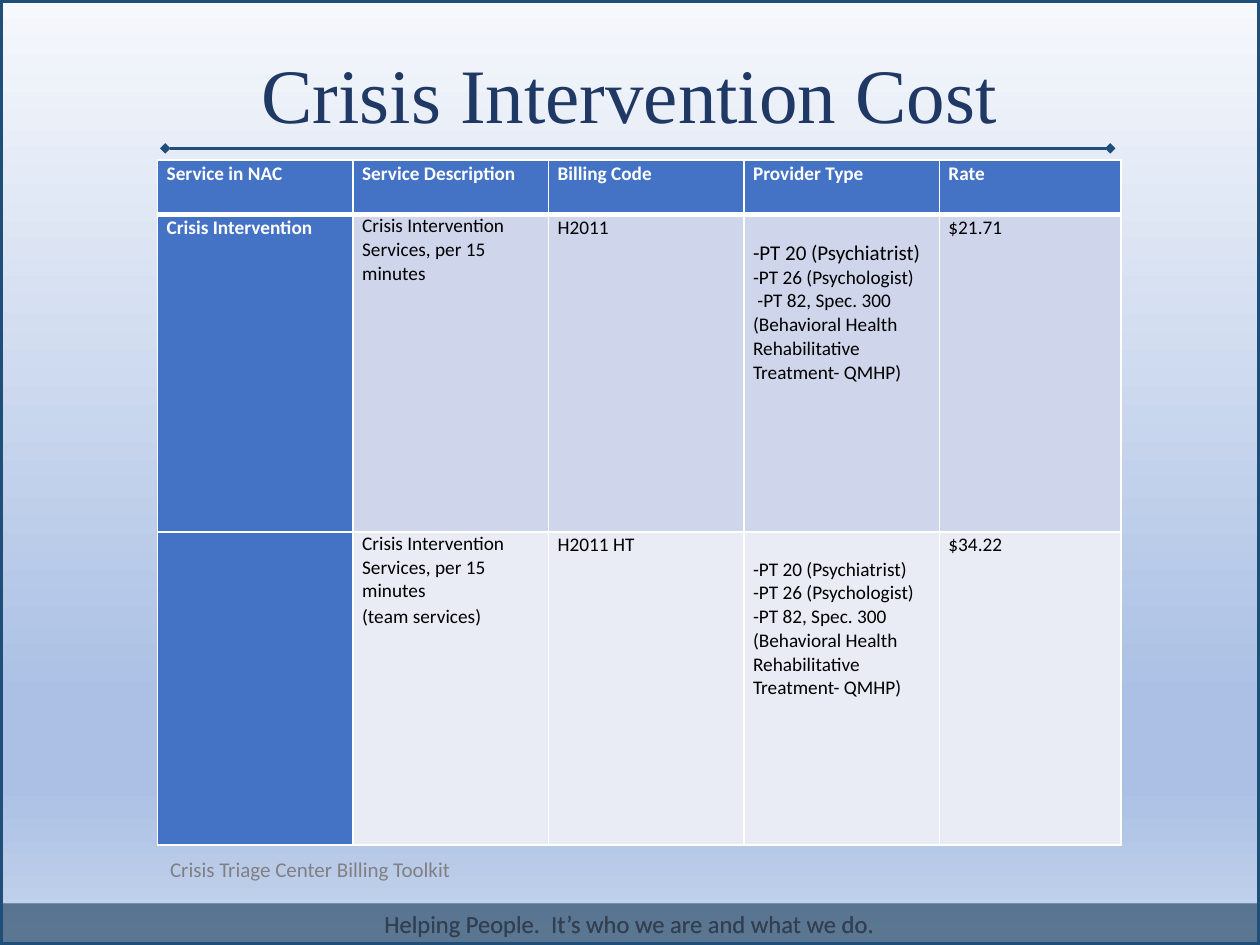
from lxml.etree import SubElement
from pptx import Presentation
from pptx.dml.color import RGBColor
from pptx.enum.shapes import MSO_CONNECTOR, MSO_SHAPE
from pptx.enum.text import MSO_ANCHOR as Anchor, PP_ALIGN as Align
from pptx.oxml import parse_xml
from pptx.oxml.ns import nsdecls, qn
from pptx.util import Cm, Pt

# Content
TITLE = "Crisis Intervention Cost"
CAPTION = "Crisis Triage Center Billing Toolkit"
MOTTO = "Helping People.  It’s who we are and what we do."
HEADER = ["Service in NAC", "Service Description", "Billing Code", "Provider Type", "Rate"]
SERVICE = "Crisis Intervention Services, per 15 minutes"
PSYCHIATRIST = "-PT 20 (Psychiatrist)"
PSYCHOLOGIST = "-PT 26 (Psychologist)"
REHABILITATION = "-PT 82, Spec. 300 (Behavioral Health Rehabilitative Treatment- QMHP)"
ROWS = [
    [[text] for text in HEADER],
    [["Crisis Intervention"], [SERVICE], ["H2011"],
     [PSYCHIATRIST, PSYCHOLOGIST, " " + REHABILITATION], ["$21.71"]],
    [[], [SERVICE, "(team services)"], ["H2011 HT"],
     [PSYCHIATRIST, PSYCHOLOGIST, REHABILITATION], ["$34.22"]],
]
PROVIDER_COLUMN = 3

# Layout in cm, colours
WIDTH, HEIGHT = 25.4, 19.05
COLUMN_WIDTHS = [3.94, 3.94, 3.94, 3.94, 3.66]
ROW_HEIGHTS = [1.09, 6.4, 6.31]
TABLE_LEFT, TABLE_TOP = 3.18, 3.23
GRADIENT = [(0, "F6F8FC"), (74, "ABC0E4"), (83, "ABC0E4"), (100, "C7D5ED")]
NAVY, BLUE, WHITE, BLACK = "1F4E79", "4472C4", "FFFFFF", "000000"
BANDS = [BLUE, "CFD5EA", "E9EBF5"]


def color(hex_code):
    return RGBColor.from_string(hex_code)


def paint(item, hex_code):
    item.fill.solid()
    item.fill.fore_color.rgb = color(hex_code)


def style(para, size, hex_code, name="Calibri", bold=False, align=None):
    font = para.font
    font.size, font.name, font.bold = Pt(size), name, bold
    font.color.rgb = color(hex_code)
    para.alignment = align


def add_text(page, text, left, top, width, height, anchor):
    box = page.shapes.add_textbox(Cm(left), Cm(top), Cm(width), Cm(height))
    frame = box.text_frame
    frame.word_wrap = True
    frame.vertical_anchor = anchor
    frame.text = text
    return frame.paragraphs[0]


def add_rectangle(page, left, top, width, height):
    shape = page.shapes.add_shape(
        MSO_SHAPE.RECTANGLE, Cm(left), Cm(top), Cm(width), Cm(height))
    shape.shadow.inherit = False
    return shape


def set_background(page):
    fill = page.background.fill
    fill.gradient()
    fill.gradient_angle = 270
    stops = page.background._cSld.find(".//" + qn("a:gsLst"))
    for stop in list(stops):
        stops.remove(stop)
    for position, hex_code in GRADIENT:
        stop = SubElement(stops, qn("a:gs"), pos=str(position * 1000))
        SubElement(stop, qn("a:srgbClr"), val=hex_code)


def add_footer(page):
    bar = add_rectangle(page, 0.03, 18.21, 25.32, 0.84)
    paint(bar, "2D4E6B")
    bar.line.fill.background()
    shade = bar._element.spPr.find(".//" + qn("a:srgbClr"))
    SubElement(shade, qn("a:alpha"), val="45000")
    frame = bar.text_frame
    frame.margin_left = frame.margin_right = Cm(0.1)
    frame.margin_top = frame.margin_bottom = Cm(0.1)
    frame.vertical_anchor = Anchor.MIDDLE
    frame.text = MOTTO
    style(frame.paragraphs[0], 14, "333F50", align=Align.CENTER)


def add_rule(page):
    rule = page.shapes.add_connector(
        MSO_CONNECTOR.STRAIGHT, Cm(3.33), Cm(2.99), Cm(22.38), Cm(2.99))
    rule.line.color.rgb = color(NAVY)
    rule.line.width = Pt(2)
    line = rule.line._get_or_add_ln()
    for end in ("a:headEnd", "a:tailEnd"):
        SubElement(line, qn(end), type="diamond")
    SubElement(rule._element.spPr, qn("a:effectLst"))


def set_borders(cell, row):
    widths = {"L": 1, "R": 1, "T": 3 if row == 1 else 1, "B": 3 if row == 0 else 1}
    properties = cell._tc.get_or_add_tcPr()
    for index, (side, width) in enumerate(widths.items()):
        properties.insert(index, parse_xml(
            f'<a:ln{side} {nsdecls("a")} w="{Pt(width)}"><a:solidFill>'
            f'<a:srgbClr val="{WHITE}"/></a:solidFill></a:ln{side}>'))


def fill_cell(cell, lines, row, column):
    heading = row == 0 or column == 0
    provider = row > 0 and column == PROVIDER_COLUMN
    cell.margin_left = cell.margin_right = Cm(0.18)
    cell.margin_top = Cm(0.52 if provider else 0)
    cell.margin_bottom = 0
    paint(cell, BLUE if heading else BANDS[row])
    set_borders(cell, row)
    cell.text = "\n".join(lines)
    for index, para in enumerate(cell.text_frame.paragraphs):
        large = provider and row == 1 and index == 0
        style(para, 12 if large else 11, WHITE if heading else BLACK, bold=heading)
        # Descriptions and providers are set tight, short entries looser
        if not provider and para.text != SERVICE:
            para.line_spacing = 1.07


def add_cost_table(page):
    table = page.shapes.add_table(
        len(ROWS), len(HEADER), Cm(TABLE_LEFT), Cm(TABLE_TOP),
        Cm(sum(COLUMN_WIDTHS)), Cm(sum(ROW_HEIGHTS))).table
    for column, width in zip(table.columns, COLUMN_WIDTHS):
        column.width = Cm(width)
    for row, height in zip(table.rows, ROW_HEIGHTS):
        row.height = Cm(height)
    for row, cells in enumerate(ROWS):
        for column, lines in enumerate(cells):
            fill_cell(table.cell(row, column), lines, row, column)


def main():
    deck = Presentation()
    deck.slide_width, deck.slide_height = Cm(WIDTH), Cm(HEIGHT)
    page = deck.slides.add_slide(deck.slide_layouts[6])

    # Backdrop: the footer bar is layered twice for its depth of colour
    set_background(page)
    for _ in range(2):
        add_footer(page)
    border = add_rectangle(page, 0, 0, WIDTH, HEIGHT)
    border.fill.background()
    border.line.color.rgb = color(NAVY)
    border.line.width = Pt(3)
    add_rule(page)

    # Title, table and caption
    title = add_text(page, TITLE, 1.75, 1.02, 21.89, 3.68, Anchor.TOP)
    style(title, 44, "203864", "Times New Roman", align=Align.CENTER)
    title.line_spacing = 0.9
    add_cost_table(page)
    caption = add_text(page, CAPTION, TABLE_LEFT, 17.02, 8.59, 1.02, Anchor.MIDDLE)
    style(caption, 12, "808080")

    deck.save("out.pptx")


if __name__ == "__main__":
    main()
